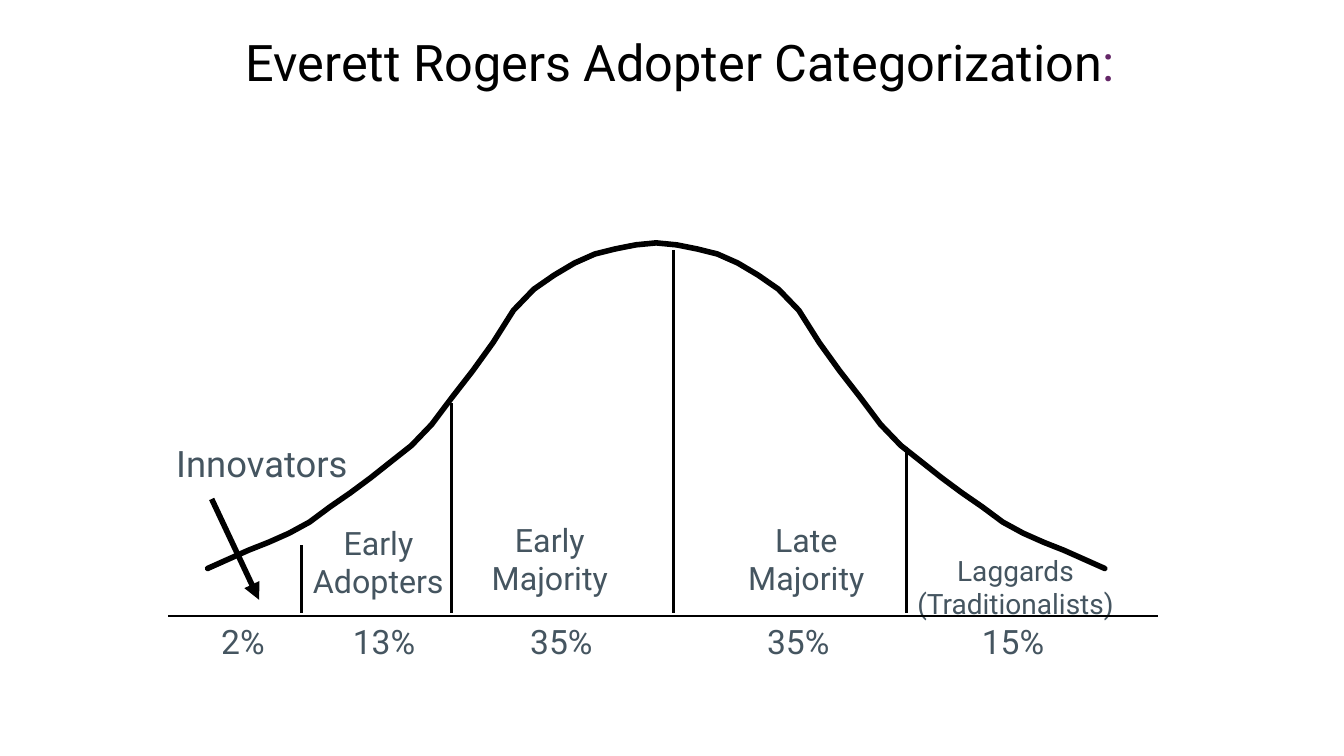
from dataclasses import dataclass

from lxml.etree import SubElement
from pptx import Presentation
from pptx.dml.color import RGBColor
from pptx.enum.shapes import MSO_CONNECTOR
from pptx.enum.text import MSO_ANCHOR, PP_ALIGN
from pptx.oxml.ns import qn
from pptx.util import Inches, Pt


@dataclass(frozen=True)
class Theme:
    font: str = "Roboto"
    ink: RGBColor = RGBColor(0x00, 0x00, 0x00)
    label: RGBColor = RGBColor(0x45, 0x55, 0x60)
    accent: RGBColor = RGBColor(0x64, 0x26, 0x67)
    title_size: int = 36
    callout_size: int = 26
    percent_size: int = 24
    label_size: int = 23
    small_size: int = 20
    thin: int = 1
    medium: int = 2
    thick: int = 4


THEME = Theme()

# Grid: 160 columns by 90 rows
WIDTH, HEIGHT = Inches(13.33), Inches(7.5)
COLS, ROWS = 160, 90

AXIS_ROW = 73.32
DIVIDER_END = 72.96
DIVIDERS = [(35.88, 64.92), (53.76, 48), (80.16, 29.76), (107.88, 53.16)]

# Left half of the bell, as rows from the tail up to the peak
CURVE_LEFT, CURVE_WIDTH = 24.72, 106.8
RISE = [67.68, 66.6, 65.52, 64.56, 63.48, 62.16, 60.36, 58.68, 56.88, 54.96,
        53.04, 50.52, 47.28, 44.16, 40.8, 36.96, 34.44, 32.76, 31.32, 30.24,
        29.64, 29.16, 28.92]

# Text, column, row, width, height, type size
CATEGORIES = [
    ("Early Adopters", 34.8, 61.68, 20.52, 10.32, THEME.label_size),
    ("Early Majority", 56.04, 61.32, 18.84, 10.32, THEME.label_size),
    ("Late Majority", 86.28, 61.32, 19.44, 10.32, THEME.label_size),
    ("Laggards (Traditionalists)", 106.8, 65.28, 28.2, 9.12, THEME.small_size),
]

# Text, column, width
PERCENTAGES = [("2%", 25.08, 7.68), ("13%", 39.96, 11.52),
               ("35%", 58.68, 16.32), ("35%", 88.68, 12.72),
               ("15%", 115.2, 10.8)]


def x(col):
    return round(WIDTH * col / COLS)


def y(row):
    return round(HEIGHT * row / ROWS)


def add_run(p, text, *, size, color=THEME.label):
    r = p.add_run()
    r.text = text
    r.font.name = THEME.font
    r.font.size = Pt(size)
    r.font.color.rgb = color


def add_text(slide, text, col, row, width, height, *, size,
             color=THEME.label, align=PP_ALIGN.CENTER, wrap=True):
    sp = slide.shapes.add_textbox(x(col), y(row), x(width), y(height))
    tf = sp.text_frame
    tf.word_wrap = wrap
    tf.paragraphs[0].alignment = align
    add_run(tf.paragraphs[0], text, size=size, color=color)
    return tf


def add_line(slide, start, end, *, width, arrow=False):
    line = slide.shapes.add_connector(
        MSO_CONNECTOR.STRAIGHT, x(start[0]), y(start[1]), x(end[0]), y(end[1]))
    line.line.color.rgb = THEME.ink
    line.line.width = Pt(width)
    if arrow:
        SubElement(line.line._get_or_add_ln(), qn("a:tailEnd"), type="triangle")
    SubElement(line._element.spPr, qn("a:effectLst"))


def add_bell_curve(slide):
    rows = RISE + RISE[-2::-1]
    step = CURVE_WIDTH / (len(rows) - 1)
    points = [(x(CURVE_LEFT + i * step), y(row)) for i, row in enumerate(rows)]
    builder = slide.shapes.build_freeform(*points[0])
    builder.add_line_segments(points[1:], close=False)
    sp = builder.convert_to_shape()
    sp.shadow.inherit = False
    sp.fill.background()
    sp.line.color.rgb = THEME.ink
    sp.line.width = Pt(THEME.thick)
    ln = sp.line._get_or_add_ln()
    ln.set("cap", "rnd")
    SubElement(ln, qn("a:round"))


def add_title(slide):
    tf = add_text(slide, "Everett Rogers Adopter Categorization",
                  28.08, 6, 108, 9.96, size=THEME.title_size,
                  color=THEME.ink, align=PP_ALIGN.LEFT)
    tf.vertical_anchor = MSO_ANCHOR.MIDDLE
    tf.margin_top, tf.margin_bottom = 0, y(6.36)
    p = tf.paragraphs[0]
    p.line_spacing = 0.9
    add_run(p, ":", size=THEME.title_size, color=THEME.accent)


def main():
    prs = Presentation()
    prs.slide_width, prs.slide_height = WIDTH, HEIGHT
    slide = prs.slides.add_slide(prs.slide_layouts[6])

    # Category names
    for text, col, row, width, height, size in CATEGORIES:
        add_text(slide, text, col, row, width, height, size=size)
    add_text(slide, "Innovators", 19.8, 51.96, 29.88, 6.24,
             size=THEME.callout_size, align=PP_ALIGN.LEFT)

    # Axis, dividers and curve
    add_line(slide, (20.04, AXIS_ROW), (137.88, AXIS_ROW), width=THEME.thin)
    for col, top in DIVIDERS:
        add_line(slide, (col, top), (col, DIVIDER_END), width=THEME.medium)
    add_bell_curve(slide)
    add_line(slide, (25.2, 59.4), (30.84, 71.4), width=THEME.thick, arrow=True)

    # Title and percentages
    add_title(slide)
    for text, col, width in PERCENTAGES:
        add_text(slide, text, col, AXIS_ROW, width, 6,
                 size=THEME.percent_size, wrap=False)

    prs.save("out.pptx")


if __name__ == "__main__":
    main()
